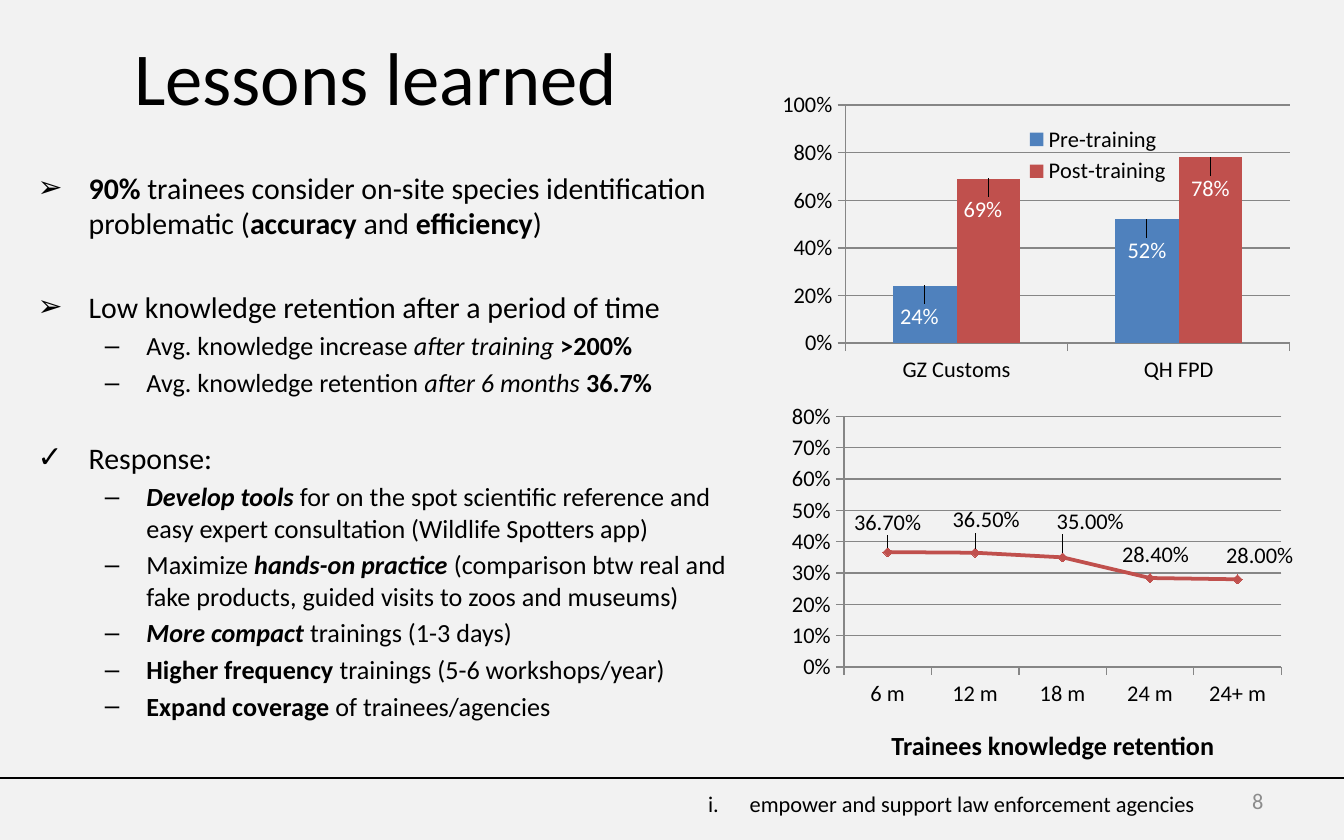
"""Build the "Lessons learned" slide with a findings list and two charts."""
from lxml import etree
from pptx import Presentation
from pptx.chart.data import CategoryChartData
from pptx.dml.color import RGBColor
from pptx.enum.chart import (XL_CHART_TYPE, XL_LABEL_POSITION, XL_LEGEND_POSITION,
                             XL_MARKER_STYLE, XL_TICK_MARK)
from pptx.enum.shapes import MSO_CONNECTOR
from pptx.enum.text import MSO_ANCHOR, MSO_AUTO_SIZE, PP_ALIGN
from pptx.oxml.ns import qn
from pptx.util import Inches, Pt

COLUMNS = XL_CHART_TYPE.COLUMN_CLUSTERED
LINES = XL_CHART_TYPE.LINE_MARKERS_STACKED
INSIDE_END, ABOVE = XL_LABEL_POSITION.INSIDE_END, XL_LABEL_POSITION.ABOVE
LEGEND_RIGHT = XL_LEGEND_POSITION.RIGHT
DIAMOND = XL_MARKER_STYLE.DIAMOND
TICK_OUTSIDE = XL_TICK_MARK.OUTSIDE
STRAIGHT = MSO_CONNECTOR.STRAIGHT
MIDDLE, TOP = MSO_ANCHOR.MIDDLE, MSO_ANCHOR.TOP
NO_AUTOFIT = MSO_AUTO_SIZE.NONE
LEFT, CENTER, RIGHT = PP_ALIGN.LEFT, PP_ALIGN.CENTER, PP_ALIGN.RIGHT
FONT = "Calibri"
COLORS = {name: RGBColor.from_string(value) for name, value in {
    "background": "F2F2F2", "text": "000000", "number": "8C8C8C", "axis": "868686",
    "blue": "4F81BD", "red": "C0504D", "white": "FFFFFF"}.items()}


def add_text(paragraph, text, size=12, color="text", bold=False, italic=False):
    run = paragraph.add_run()
    run.text = text
    run.font.name = FONT
    run.font.size = Pt(size)
    run.font.bold = bold
    run.font.italic = italic
    run.font.color.rgb = COLORS[color]


def set_layout(parent, index, modes, **values):
    for old in parent.findall(qn("c:layout")):
        parent.remove(old)
    layout = etree.Element(qn("c:layout"))
    manual = etree.SubElement(layout, qn("c:manualLayout"))
    for tag, value in {**modes, **values}.items():
        etree.SubElement(manual, qn(f"c:{tag}")).set("val", str(value))
    parent.insert(index, layout)


presentation = Presentation()
presentation.slide_width = Inches(10)
presentation.slide_height = Inches(6.25)
slide = presentation.slides.add_slide(presentation.slide_layouts[1])
slide.background.fill.solid()
slide.background.fill.fore_color.rgb = COLORS["background"]

title, body = slide.placeholders
for placeholder, (left, top, width, height), anchor in [
        (title, (0.17, 0.02, 5.25, 1.08), MIDDLE), (body, (0.18, 1.21, 5.5, 4.5), TOP)]:
    placeholder.left, placeholder.top = Inches(left), Inches(top)
    placeholder.width, placeholder.height = Inches(width), Inches(height)
    placeholder.text_frame.auto_size = NO_AUTOFIT
    placeholder.text_frame.vertical_anchor = anchor
title.text_frame.paragraphs[0].alignment = CENTER
add_text(title.text_frame.paragraphs[0], "Lessons learned", size=40)

PLAIN, BOLD, ITALIC, STRONG = {}, {"bold": True}, {"italic": True}, {"bold": True, "italic": True}
findings = [
    (0, "➢", 0, [("90% ", BOLD), ("trainees consider on-site species identification problematic (", PLAIN),
                 ("accuracy", BOLD), (" and ", PLAIN), ("efficiency", BOLD), (")", PLAIN)]),
    (0, "➢", 25.5, [("Low knowledge retention after a period of time", PLAIN)]),
    (1, "–", 2.8, [("Avg. knowledge increase ", PLAIN), ("after training ", ITALIC), (">200%", BOLD)]),
    (1, "–", 2.8, [("Avg. knowledge retention ", PLAIN), ("after 6 months ", ITALIC), ("36.7%", BOLD)]),
    (0, "✓", 22.5, [("Response:", PLAIN)]),
    (1, "–", 2.8, [("Develop tools ", STRONG),
                   ("for on the spot scientific reference and easy expert consultation "
                    "(Wildlife Spotters app)", PLAIN)]),
    (1, "–", 2.8, [("Maximize", PLAIN), (" hands-on practice ", STRONG),
                   ("(comparison btw real and fake products, guided visits to zoos and museums)", PLAIN)]),
    (1, "–", 2.8, [("More compact ", STRONG), ("trainings (1-3 days)", PLAIN)]),
    (1, "–", 2.8, [("Higher frequency ", BOLD), ("trainings (5-6 workshops/year)", PLAIN)]),
    (1, "–", 2.8, [("Expand coverage ", BOLD), ("of trainees/agencies", PLAIN)]),
]
for number, (level, bullet, space, runs) in enumerate(findings):
    frame = body.text_frame
    paragraph = frame.add_paragraph() if number else frame.paragraphs[0]
    paragraph.level = level
    paragraph.space_before = Pt(space)
    properties = paragraph._p.get_or_add_pPr()
    properties.set("marL", str(Inches((0.38, 0.81)[level])))
    properties.set("indent", str(Inches((-0.38, -0.31)[level])))
    etree.SubElement(properties, qn("a:buFont")).set("typeface", "Arial")
    etree.SubElement(properties, qn("a:buChar")).set("char", bullet)
    for text, style in runs:
        add_text(paragraph, text, size=(16, 14)[level], **style)

footer_line = slide.shapes.add_connector(STRAIGHT, Inches(0), Inches(5.79), Inches(10), Inches(5.79))
footer_line.line.color.rgb = COLORS["text"]
footer_line.line.width = Pt(0.75)
etree.SubElement(footer_line._element.spPr, qn("a:effectLst"))

charts = []
for kind, box, categories, series_values, label_format, maximum, step, plot_box in [
        (COLUMNS, (5.68, 0.62, 4.08, 2.33), ["GZ Customs", "QH FPD"],
         {"Pre-training": (0.24, 0.52), "Post-training": (0.69, 0.78)},
         "0%", 1, 0.2, (0.15, 0.07, 0.81, 0.76)),
        (LINES, (5.62, 2.96, 4.12, 2.33), ["6 m", "12 m", "18 m", "24 m", "24+ m"],
         {"Series 1": (0.367, 0.365, 0.35, 0.284, 0.28)},
         "0.00%", 0.8, 0.1, (0.16, 0.06, 0.79, 0.8))]:
    chart_data = CategoryChartData(number_format=label_format)
    chart_data.categories = categories
    for name, values in series_values.items():
        chart_data.add_series(name, values)
    chart = slide.shapes.add_chart(kind, *map(Inches, box), chart_data).chart
    chart.has_title = False
    chart.has_legend = False
    chart.font.name = FONT
    chart.font.size = Pt(12)
    chart.font.color.rgb = COLORS["text"]
    for axis in (chart.category_axis, chart.value_axis):
        axis.major_tick_mark = TICK_OUTSIDE
        axis.tick_labels.font.size = Pt(12)
        axis.format.line.color.rgb = COLORS["axis"]
    value_axis = chart.value_axis
    value_axis.minimum_scale, value_axis.maximum_scale = 0, maximum
    value_axis.major_unit = step
    value_axis.tick_labels.number_format = "0%"
    value_axis.tick_labels.number_format_is_linked = False
    value_axis.has_major_gridlines = True
    value_axis.major_gridlines.format.line.color.rgb = COLORS["axis"]
    plot = chart.plots[0]
    plot.vary_by_categories = False
    plot_area = chart._chartSpace.chart.plotArea
    set_layout(plot_area, 0, {"layoutTarget": "inner", "xMode": "edge", "yMode": "edge"},
               **dict(zip("xywh", plot_box)))
    charts.append(chart)

training_chart, retention_chart = charts
training_chart.plots[0].gap_width = 150
training_chart.has_legend = True
legend = training_chart.legend
legend.position = LEGEND_RIGHT
legend.include_in_layout = False
legend.font.size = Pt(12)
set_layout(legend._element, 1, {"xMode": "edge", "yMode": "edge"}, x=0.47, y=0.12, w=0.28, h=0.22)
for series, color in zip(training_chart.plots[0].series, ("blue", "red")):
    series.format.fill.solid()
    series.format.fill.fore_color.rgb = COLORS[color]

retention = retention_chart.plots[0].series[0]
retention.smooth = False
retention.format.line.color.rgb = COLORS["red"]
retention.format.line.width = Pt(2)
retention.marker.style = DIAMOND
retention.marker.size = 5
retention.marker.format.fill.solid()
retention.marker.format.fill.fore_color.rgb = COLORS["red"]
retention.marker.format.line.color.rgb = COLORS["red"]

column_shifts = [(-0.01, 0.04), (0, 0.04)]
line_shifts = [(0, -0.02), (0.02, -0.03), (0.05, -0.04), (0.01, 0), (0.04, 0)]
for chart, position, color, shifts in [(training_chart, INSIDE_END, "white", column_shifts),
                                       (retention_chart, ABOVE, "text", line_shifts)]:
    for series in chart.plots[0].series:
        for index, (x, y) in enumerate(shifts):
            label = series.points[index].data_label
            label.font.size = Pt(12)
            label.font.color.rgb = COLORS[color]
            label.position = position
            set_layout(series.data_labels._element.findall(qn("c:dLbl"))[index], 1, {}, x=x, y=y)
        series.data_labels.show_value = True

for text, box, alignment, anchor, style in [
        ("Trainees knowledge retention", (5.92, 5.38, 3.83, 0.34), CENTER, TOP, {"size": 14, "bold": True}),
        ("8", (7.17, 5.79, 2.33, 0.33), RIGHT, MIDDLE, {"color": "number"}),
        ("empower and support law enforcement agencies", (5.17, 5.83, 4.27, 0.3), LEFT, TOP, {})]:
    frame = slide.shapes.add_textbox(*map(Inches, box)).text_frame
    frame.word_wrap = True
    frame.vertical_anchor = anchor
    paragraph = frame.paragraphs[0]
    paragraph.alignment = alignment
    add_text(paragraph, text, **style)
goal_properties = paragraph._p.get_or_add_pPr()
goal_properties.set("marL", str(Inches(0.31)))
goal_properties.set("indent", str(Inches(-0.31)))
etree.SubElement(goal_properties, qn("a:buAutoNum")).set("type", "romanLcPeriod")

presentation.save("out.pptx")
